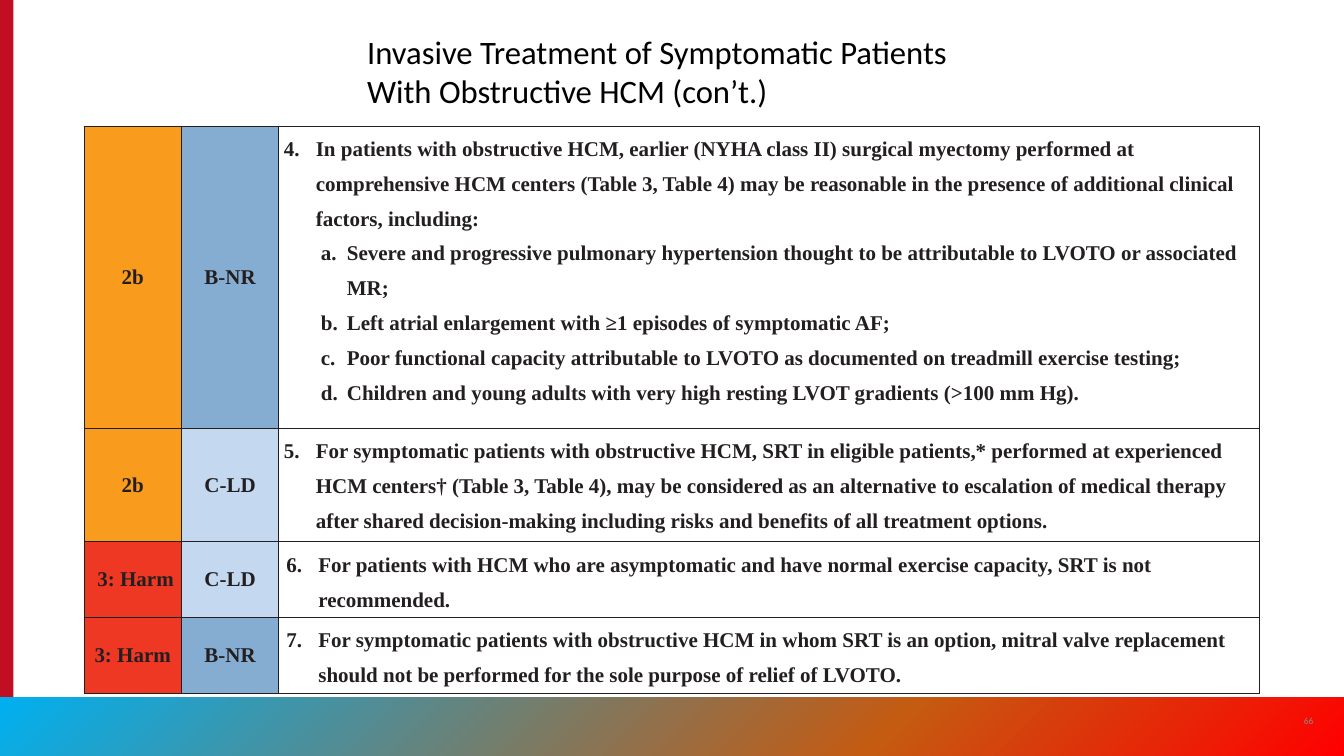
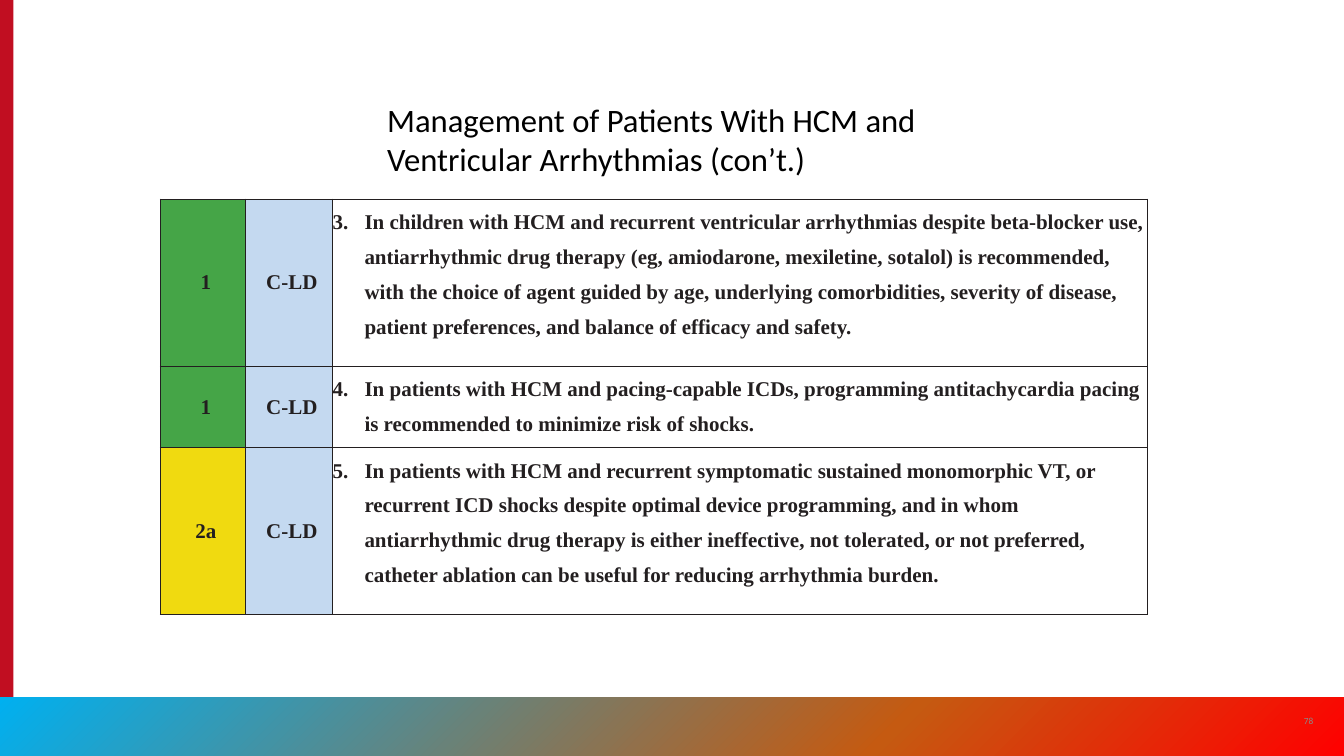
from copy import deepcopy

from pptx import Presentation
from pptx.dml.color import RGBColor
from pptx.enum.shapes import MSO_SHAPE
from pptx.enum.text import MSO_ANCHOR, MSO_AUTO_SIZE, PP_ALIGN
from pptx.oxml import parse_xml
from pptx.oxml.ns import nsdecls, qn
from pptx.util import Inches, Pt

RECTANGLE = MSO_SHAPE.RECTANGLE
TOP, MIDDLE = MSO_ANCHOR.TOP, MSO_ANCHOR.MIDDLE
LEFT, CENTER = PP_ALIGN.LEFT, PP_ALIGN.CENTER
GROW = MSO_AUTO_SIZE.SHAPE_TO_FIT_TEXT

BLACK = RGBColor(0x00, 0x00, 0x00)
INK = RGBColor(0x23, 0x1F, 0x20)
GRAY = RGBColor(0x8A, 0x8B, 0x8A)
CRIMSON = RGBColor(0xC1, 0x0E, 0x21)
BAND_STOPS = [
    (0, RGBColor(0x00, 0xB0, 0xF0)),
    (0.66, RGBColor(0xC5, 0x5A, 0x11)),
    (1, RGBColor(0xFF, 0x00, 0x00)),
]
CLASS_COLORS = {
    "1": RGBColor(0x45, 0xA5, 0x47),
    "2a": RGBColor(0xF0, 0xDA, 0x10),
    "2b": RGBColor(0xF9, 0x9B, 0x1C),
    "3: Harm": RGBColor(0xEF, 0x38, 0x24),
}
LEVEL_COLORS = {
    "B-NR": RGBColor(0x85, 0xAD, 0xD1),
    "C-LD": RGBColor(0xC4, 0xD9, 0xF0),
}
TITLE_FONT, TABLE_FONT = "Calibri", "Times New Roman"

# Each row: height, class, class indent, level, text indent, number, text, sub-items
SLIDES = [
    {
        "page": "66",
        "title": "Invasive Treatment of Symptomatic Patients With Obstructive HCM (con’t.)",
        "title_box": (4.27, 0.33, 7.46, 1.04),
        "table_at": (1, 1.5),
        "columns": (1.16, 1.16, 11.68),
        "level_indent": 0,
        "rows": [
            (3.6, "2b", 0, "B-NR", 0.44, 4,
             "In patients with obstructive HCM, earlier (NYHA class II) surgical myectomy "
             "performed at comprehensive HCM centers (Table 3, Table 4) may be reasonable "
             "in the presence of additional clinical factors, including:",
             ["Severe and progressive pulmonary hypertension thought to be attributable "
              "to LVOTO or associated MR;",
              "Left atrial enlargement with ≥1 episodes of symptomatic AF;",
              "Poor functional capacity attributable to LVOTO as documented on treadmill "
              "exercise testing;",
              "Children and young adults with very high resting LVOT gradients "
              "(>100 mm Hg)."]),
            (1.35, "2b", 0, "C-LD", 0.44, 5,
             "For symptomatic patients with obstructive HCM, SRT in eligible patients,* "
             "performed at experienced HCM centers† (Table 3, Table 4), may be considered "
             "as an alternative to escalation of medical therapy after shared "
             "decision-making including risks and benefits of all treatment options.", []),
            (0.9, "3: Harm", 0.07, "C-LD", 0.47, 6,
             "For patients with HCM who are asymptomatic and have normal exercise "
             "capacity, SRT is not recommended.", []),
            (0.9, "3: Harm", 0, "B-NR", 0.47, 7,
             "For symptomatic patients with obstructive HCM in whom SRT is an option, "
             "mitral valve replacement should not be performed for the sole purpose of "
             "relief of LVOTO.", []),
        ],
    },
    {
        "page": "78",
        "title": "Management of Patients With HCM and Ventricular Arrhythmias (con’t.)",
        "title_box": (4.51, 1.14, 6.99, 1.04),
        "table_at": (1.91, 2.37),
        "columns": (1.01, 1.04, 9.7),
        "level_indent": 0.07,
        "rows": [
            (1.99, "1", 0.07, "C-LD", 0.38, 3,
             "In children with HCM and recurrent ventricular arrhythmias despite "
             "beta-blocker use, antiarrhythmic drug therapy (eg, amiodarone, mexiletine, "
             "sotalol) is recommended, with the choice of agent guided by age, underlying "
             "comorbidities, severity of disease, patient preferences, and balance of "
             "efficacy and safety.", []),
            (0.97, "1", 0.07, "C-LD", 0.38, 4,
             "In patients with HCM and pacing-capable ICDs, programming antitachycardia "
             "pacing is recommended to minimize risk of shocks.", []),
            (1.99, "2a", 0.07, "C-LD", 0.38, 5,
             "In patients with HCM and recurrent symptomatic sustained monomorphic VT, or "
             "recurrent ICD shocks despite optimal device programming, and in whom "
             "antiarrhythmic drug therapy is either ineffective, not tolerated, or not "
             "preferred, catheter ablation can be useful for reducing arrhythmia burden.",
             []),
        ],
    },
]


def add_run(paragraph, text, font, size, color, bold=False):
    run = paragraph.add_run()
    run.text = text
    run.font.name, run.font.size = font, Pt(size)
    run.font.color.rgb, run.font.bold = color, bold


def indent(paragraph, margin, hanging=0, scheme=None, start=1):
    """Set the left margin and, if a scheme is given, automatic numbering."""
    properties = paragraph._p.get_or_add_pPr()
    properties.set("marL", str(Inches(margin)))
    properties.set("indent", str(-Inches(hanging)))
    if scheme:
        properties.append(parse_xml(
            f'<a:buAutoNum {nsdecls("a")} type="{scheme}" startAt="{start}"/>'))
        paragraph.line_spacing = 1.5


prs = Presentation()
prs.slide_width, prs.slide_height = Inches(16), Inches(9)
layout = prs.slide_layouts.get_by_name("Title Only")
slides = [prs.slides.add_slide(layout) for _ in SLIDES]

# The side bar and footer band belong to the shared layout
shapes = slides[0].shapes
side_bar = shapes.add_shape(RECTANGLE, 0, 0, Inches(0.16), Inches(9))
side_bar.fill.solid()
side_bar.fill.fore_color.rgb = CRIMSON

footer_band = shapes.add_shape(RECTANGLE, 0, Inches(8.3), Inches(16), Inches(0.7))
footer_band.fill.gradient()
footer_band.fill.gradient_angle = 315
stop_list = footer_band.element.find(".//" + qn("a:gsLst"))
stop_list.append(deepcopy(stop_list[0]))
for stop, (position, color) in zip(footer_band.fill.gradient_stops, BAND_STOPS):
    stop.position = position
    stop.color.rgb = color

for shape_id, shape in enumerate((side_bar, footer_band), start=20):
    shape.line.fill.background()
    shape.shadow.inherit = False
    shape.element.find(".//" + qn("p:cNvPr")).set("id", str(shape_id))
    layout.shapes.element.append(shape.element)

for slide, content in zip(slides, SLIDES):
    title = slide.shapes.title
    title.left, title.top, title.width, title.height = map(Inches, content["title_box"])
    title_frame = title.text_frame
    title_frame.word_wrap = True
    title_frame.auto_size = GROW
    title_frame.vertical_anchor = TOP
    title_frame.paragraphs[0].alignment = LEFT
    add_run(title_frame.paragraphs[0], content["title"], TITLE_FONT, 28, BLACK)

    page_box = slide.shapes.add_textbox(*map(Inches, (15.34, 8.34, 0.48, 0.48)))
    page_frame = page_box.text_frame
    page_frame.word_wrap = True
    page_frame.vertical_anchor = MIDDLE
    page_frame.paragraphs[0].alignment = CENTER
    add_run(page_frame.paragraphs[0], content["page"], TITLE_FONT, 8, GRAY)

    rows, columns = content["rows"], content["columns"]
    left, top = content["table_at"]
    height = sum(row[0] for row in rows)
    table = slide.shapes.add_table(
        len(rows), len(columns),
        *map(Inches, (left, top, sum(columns), height))).table
    table.first_row = table.horz_banding = False
    for column, width in zip(table.columns, columns):
        column.width = Inches(width)

    for cell in table.iter_cells():
        cell.margin_left = cell.margin_right = cell.margin_top = cell.margin_bottom = 0
        for side in ("lnL", "lnR", "lnT", "lnB"):
            cell._tc.get_or_add_tcPr().append(parse_xml(
                f'<a:{side} {nsdecls("a")} w="{Pt(1)}"><a:solidFill>'
                f'<a:srgbClr val="{INK}"/></a:solidFill></a:{side}>'))

    for index, row in enumerate(rows):
        (row_height, rec_class, class_indent, level, text_indent,
         number, recommendation, factors) = row
        table.rows[index].height = Inches(row_height)
        class_cell, level_cell, text_cell = table.rows[index].cells

        for cell, label, margin, color in (
            (class_cell, rec_class, class_indent, CLASS_COLORS[rec_class]),
            (level_cell, level, content["level_indent"], LEVEL_COLORS[level]),
        ):
            cell.fill.solid()
            cell.fill.fore_color.rgb = color
            cell.vertical_anchor = MIDDLE
            paragraph = cell.text_frame.paragraphs[0]
            paragraph.alignment = CENTER
            indent(paragraph, margin)
            add_run(paragraph, label, TABLE_FONT, 18, INK, bold=True)

        text_cell.fill.background()
        paragraph = text_cell.text_frame.paragraphs[0]
        indent(paragraph, text_indent, 0.38, "arabicPeriod", number)
        add_run(paragraph, recommendation, TABLE_FONT, 18, INK, bold=True)
        for factor in factors:
            paragraph = text_cell.text_frame.add_paragraph()
            paragraph.level = 1
            indent(paragraph, 0.81, 0.31, "alphaLcPeriod")
            add_run(paragraph, factor, TABLE_FONT, 18, INK, bold=True)

prs.save("out.pptx")
